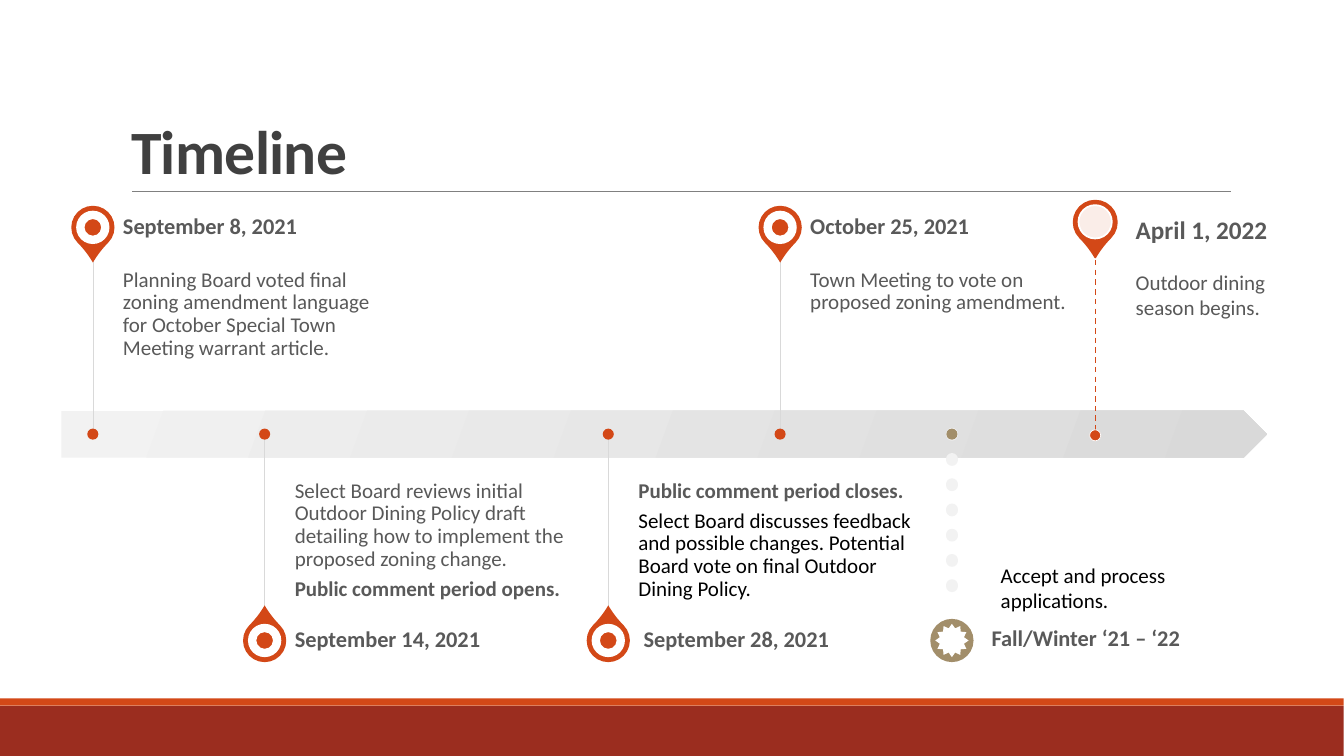
"""Build a timeline slide with six milestones along a grey arrow."""
from lxml.etree import SubElement
from pptx import Presentation
from pptx.dml.color import RGBColor as Rgb
from pptx.enum.dml import MSO_LINE as Dash
from pptx.enum.shapes import MSO_CONNECTOR as Link, MSO_SHAPE as Kind
from pptx.enum.text import MSO_ANCHOR as Anchor, MSO_AUTO_SIZE as Fit, PP_ALIGN as Align
from pptx.oxml.ns import qn
from pptx.util import Cm, Pt

HUES = {
    "red": "D34817", "brick": "9B2D1F", "tan": "A28E6A", "white": "FFFFFF",
    "black": "000000", "head": "404040", "text": "595959", "rule": "808080",
    "stem": "D9D9D9", "pale": "F2F2F2",
}
HUES = {name: Rgb.from_string(code) for name, code in HUES.items()}

deck = Presentation()
deck.slide_width, deck.slide_height = Cm(33.87), Cm(19.05)
slide = deck.slides.add_slide(deck.slide_layouts[5])


def shape(kind, x, y, wide, high, fill, line=None, weight=0):
    """Add a preset shape centred on x, y."""
    item = slide.shapes.add_shape(
        kind, Cm(x - wide / 2), Cm(y - high / 2), Cm(wide), Cm(high))
    item.shadow.inherit = False
    item.fill.solid()
    item.fill.fore_color.rgb = HUES[fill]
    if line:
        item.line.color.rgb = HUES[line]
        item.line.width = Pt(weight)
    else:
        item.line.fill.background()
    return item


def label(x, y, wide, high, paras, size, anchor=Anchor.TOP,
          pad=(0.25, 0.13, 0.25, 0.13), tight=True):
    """Add a text box; paras holds (words, bold, hue)."""
    frame = slide.shapes.add_textbox(Cm(x), Cm(y), Cm(wide), Cm(high)).text_frame
    frame.word_wrap = True
    frame.vertical_anchor = anchor
    frame.margin_left, frame.margin_top, frame.margin_right, frame.margin_bottom = map(Cm, pad)
    frame.text = "\n".join(words for words, bold, hue in paras)
    for para, (words, bold, hue) in zip(frame.paragraphs, paras):
        if tight:
            para.line_spacing = 0.9
            para.space_after = Pt(size * 0.35)
        font = para.runs[0].font
        font.name, font.size, font.bold = "Calibri", Pt(size), bold
        font.color.rgb = HUES[hue]


shape(Kind.RECTANGLE, 16.93, 18.42, 33.87, 1.27, "brick")
shape(Kind.RECTANGLE, 16.93, 17.69, 33.87, 0.18, "red")

title = slide.shapes.title
title.left, title.top, title.width, title.height = Cm(3.05), Cm(0.79), Cm(27.94), Cm(4.04)
frame = title.text_frame
frame.text = "Timeline"
frame.auto_size = Fit.NONE
frame.vertical_anchor = Anchor.BOTTOM
para = frame.paragraphs[0]
para.alignment = Align.LEFT
para.line_spacing = 0.85
font = para.runs[0].font
font.name, font.size, font.bold = "Calibri", Pt(44), True
font.color.rgb = HUES["head"]
para.runs[0].font._element.set("spc", "-50")

MID, HIGH, LOW = 10.94, 5.73, 16.14
FIRST, STEP = 2.34, 4.33
SPRING, FALL = 27.6, FIRST + 5 * STEP
PIN, HOLE, DOT, STEM = 1.09, 0.84, 0.28, 4.42

arrow = shape(Kind.PENTAGON, 16.74, MID, 30.38, 1.19, "pale")
arrow.fill.gradient()
arrow.fill.gradient_angle = 340
for stop, hue in zip(arrow.fill.gradient_stops, ("pale", "stem")):
    stop.color.rgb = HUES[hue]

events = [
    (0, True, "September 8, 2021", 0, [
        ("Planning Board voted final zoning amendment language for October "
         "Special Town Meeting warrant article.", False, "text")]),
    (1, False, "September 14, 2021", 0, [
        ("Select Board reviews initial Outdoor Dining Policy draft detailing "
         "how to implement the proposed zoning change.", False, "text"),
        ("Public comment period opens.", True, "text")]),
    (3, False, "September 28, 2021", 0.13, [
        ("Public comment period closes.", True, "text"),
        ("Select Board discusses feedback and possible changes. Potential "
         "Board vote on final Outdoor Dining Policy.", False, "black")]),
    (4, True, "October 25, 2021", 0, [
        ("Town Meeting to vote on proposed zoning amendment.", False, "text")]),
]

lines = [
    (3.33, 4.83, 31.01, 4.83, "rule", 0.5, None),
    (SPRING, 6.55, SPRING, 6.55 + STEM, "red", 1, Dash.DASH),
    (FALL, MID, FALL, MID + STEM, "pale", 9, Dash.ROUND_DOT),
]
for slot, above, *rest in events:
    x = FIRST + slot * STEP
    lines.append((x, MID, x, MID - STEM if above else MID + STEM, "stem", 0.25, None))

for x1, y1, x2, y2, hue, weight, dash in lines:
    line = slide.shapes.add_connector(Link.STRAIGHT, Cm(x1), Cm(y1), Cm(x2), Cm(y2))
    line.line.color.rgb = HUES[hue]
    line.line.width = Pt(weight)
    if dash:
        line.line.dash_style = dash
    if dash == Dash.ROUND_DOT:
        line.line._ln.set("cap", "rnd")
    SubElement(line._element.spPr, qn("a:effectLst"))

for slot, above, date, shift, paras in events:
    x = FIRST + slot * STEP
    y = HIGH if above else LOW
    pin = shape(Kind.TEAR, x, y, PIN, PIN, "red")
    pin.adjustments[0] = 1.15
    pin.rotation = 135 if above else 315
    shape(Kind.DONUT, x, y, HOLE, HOLE, "white")
    shape(Kind.OVAL, x, MID, DOT, DOT, "red")
    left = x + 0.76
    label(left + shift, y - 0.77, 7.16, 1.55, [(date, True, "text")], 16,
          Anchor.MIDDLE, (0, 0, 0.28, 0))
    if above:
        label(left, 6.53, 7.16, STEM, paras, 15, Anchor.TOP, (0, 0.25, 0.25, 0.41))
    else:
        label(left, 10.97, 7.16, STEM, paras, 15, Anchor.BOTTOM, (0, 0.41, 0, 0.25))

pin = shape(Kind.TEAR, SPRING, 5.6, PIN, PIN, "red", "red", 1.25)
pin.adjustments[0] = 1.15
pin.rotation = 135
hole = shape(Kind.OVAL, SPRING, 5.59, HOLE, HOLE, "white", "white", 1.25)
tint = hole._element.spPr.find(qn("a:solidFill"))[0]
SubElement(tint, qn("a:alpha")).set("val", "90000")
shape(Kind.OVAL, SPRING, 10.97, DOT, DOT, "red", "white", 0.5)
label(28.37, 5.26, 3.96, 1.02, [("April 1, 2022", True, "text")], 18, tight=False)
label(28.37, 6.65, 3.96, 1.55, [("Outdoor dining season begins.", False, "text")], 15, tight=False)

shape(Kind.OVAL, FALL, LOW, PIN, PIN, "tan")
shape(Kind.STAR_12_POINT, FALL, LOW, HOLE, HOLE, "white")
shape(Kind.OVAL, FALL, MID, DOT, DOT, "tan")
label(24.74, 15.6, 5.79, 0.94, [("Fall/Winter ‘21 – ‘22", True, "text")], 16, tight=False)
label(24.97, 14.05, 5.41, 1.55, [("Accept and process applications.", False, "black")], 15, tight=False)

deck.save("out.pptx")
